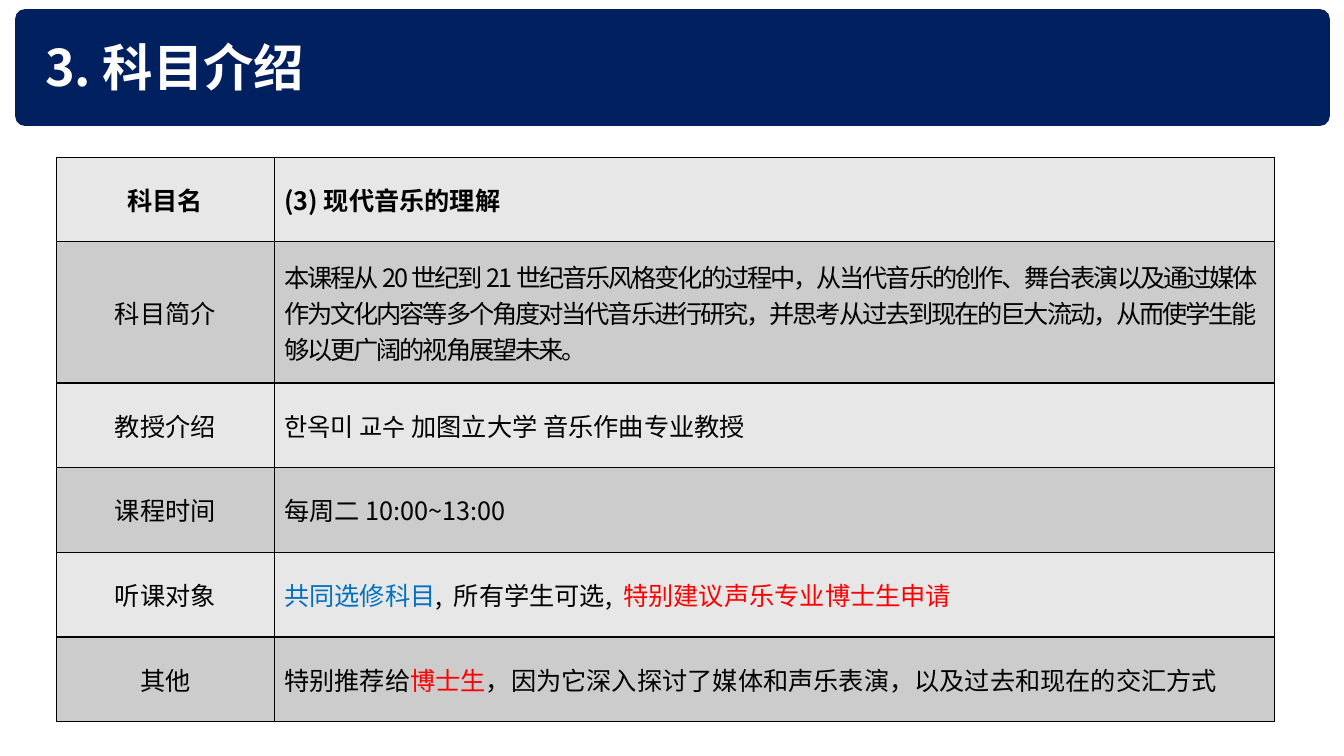
from dataclasses import dataclass

from lxml import etree
from pptx import Presentation
from pptx import util as u
from pptx.dml.color import RGBColor
from pptx.enum import shapes, text
from pptx.oxml import ns


@dataclass(frozen=True)
class Theme:
    font: str = "Noto Sans CJK KR"
    title_size: int = 36
    body_size: int = 18
    navy: str = "002060"
    white: str = "FFFFFF"
    black: str = "000000"
    blue: str = "0070C0"
    red: str = "FF0000"
    bands: tuple = ("E7E7E7", "CCCCCC")


theme = Theme()


def add_run(para, words, color, size=theme.body_size, bold=False, spacing=0):
    """Add one run in the theme font; spacing is in hundredths of a point."""
    span = para.add_run()
    span.text = words
    span.font.name = theme.font
    span.font.size = u.Pt(size)
    span.font.bold = bold
    span.font.color.rgb = RGBColor.from_string(color)
    props = span.font._element
    if spacing:
        props.set("spc", str(spacing))
    etree.SubElement(props, ns.qn("a:ea"), typeface=theme.font)


def add_borders(cell):
    """Draw a thin black line on all four sides, ahead of the cell's fill."""
    props = cell._tc.get_or_add_tcPr()
    for position, side in enumerate(("lnL", "lnR", "lnT", "lnB")):
        line = etree.Element(ns.qn(f"a:{side}"), w=str(u.Pt(1)))
        fill = etree.SubElement(line, ns.qn("a:solidFill"))
        etree.SubElement(fill, ns.qn("a:srgbClr"), val=theme.black)
        props.insert(position, line)


deck = Presentation()
deck.slide_width, deck.slide_height = u.Inches(13.33), u.Inches(7.5)
page = deck.slides.add_slide(deck.slide_layouts[6])

# Title banner
banner = page.shapes.add_shape(
    shapes.MSO_SHAPE.ROUNDED_RECTANGLE,
    u.Inches(0.15), u.Inches(0.09), u.Inches(13.04), u.Inches(1.16))
banner.adjustments[0] = 0.085
banner.shadow.inherit = False
banner.fill.solid()
banner.fill.fore_color.rgb = RGBColor.from_string(theme.navy)
banner.line.fill.background()

title = page.shapes.add_textbox(
    u.Inches(0.35), u.Inches(0.31), u.Inches(11.73), u.Inches(0.71))
title.text_frame.word_wrap = True
title.text_frame.auto_size = text.MSO_AUTO_SIZE.SHAPE_TO_FIT_TEXT
add_run(title.text_frame.paragraphs[0], "3. 科目介绍", theme.white,
        size=theme.title_size, bold=True)

# Course table: label, then the coloured parts of the description
course_rows = [
    ("科目名", [("(3) 现代音乐的理解", theme.black)]),
    ("科目简介", [("本课程从 20 世纪到 21 世纪音乐风格变化的过程中，从当代音乐的创作、"
               "舞台表演以及通过媒体作为文化内容等多个角度对当代音乐进行研究，"
               "并思考从过去到现在的巨大流动，从而使学生能够以更广阔的视角展望未来。",
               theme.black)]),
    ("教授介绍", [("한옥미 교수 加图立大学 音乐作曲专业教授", theme.black)]),
    ("课程时间", [("每周二 10:00~13:00", theme.black)]),
    ("听课对象", [("共同选修科目", theme.blue),
              (",  所有学生可选,  ", theme.black),
              ("特别建议声乐专业博士生申请", theme.red)]),
    ("其他", [("特别推荐给", theme.black),
            ("博士生", theme.red),
            ("，因为它深入探讨了媒体和声乐表演，以及过去和现在的交汇方式", theme.black)]),
]
NAME_ROW, SUMMARY_ROW = 0, 1

table = page.shapes.add_table(
    len(course_rows), 2,
    u.Inches(0.56), u.Inches(1.56), u.Inches(12.08), u.Inches(5.58)).table
for column, width in zip(table.columns, (2.16, 9.92)):
    column.width = u.Inches(width)

for index, (label, parts) in enumerate(course_rows):
    table.rows[index].height = u.Inches(1.4 if index == SUMMARY_ROW else 0.84)
    label_cell, detail_cell = table.cell(index, 0), table.cell(index, 1)
    for cell in (label_cell, detail_cell):
        cell.vertical_anchor = text.MSO_ANCHOR.MIDDLE
        cell.fill.solid()
        cell.fill.fore_color.rgb = RGBColor.from_string(theme.bands[index % 2])
        add_borders(cell)

    bold = index == NAME_ROW
    label_para = label_cell.text_frame.paragraphs[0]
    label_para.alignment = text.PP_ALIGN.CENTER
    add_run(label_para, label, theme.black, bold=bold)
    for words, color in parts:
        add_run(detail_cell.text_frame.paragraphs[0], words, color, bold=bold,
                spacing=-150 if index == SUMMARY_ROW else 0)

deck.save("out.pptx")
